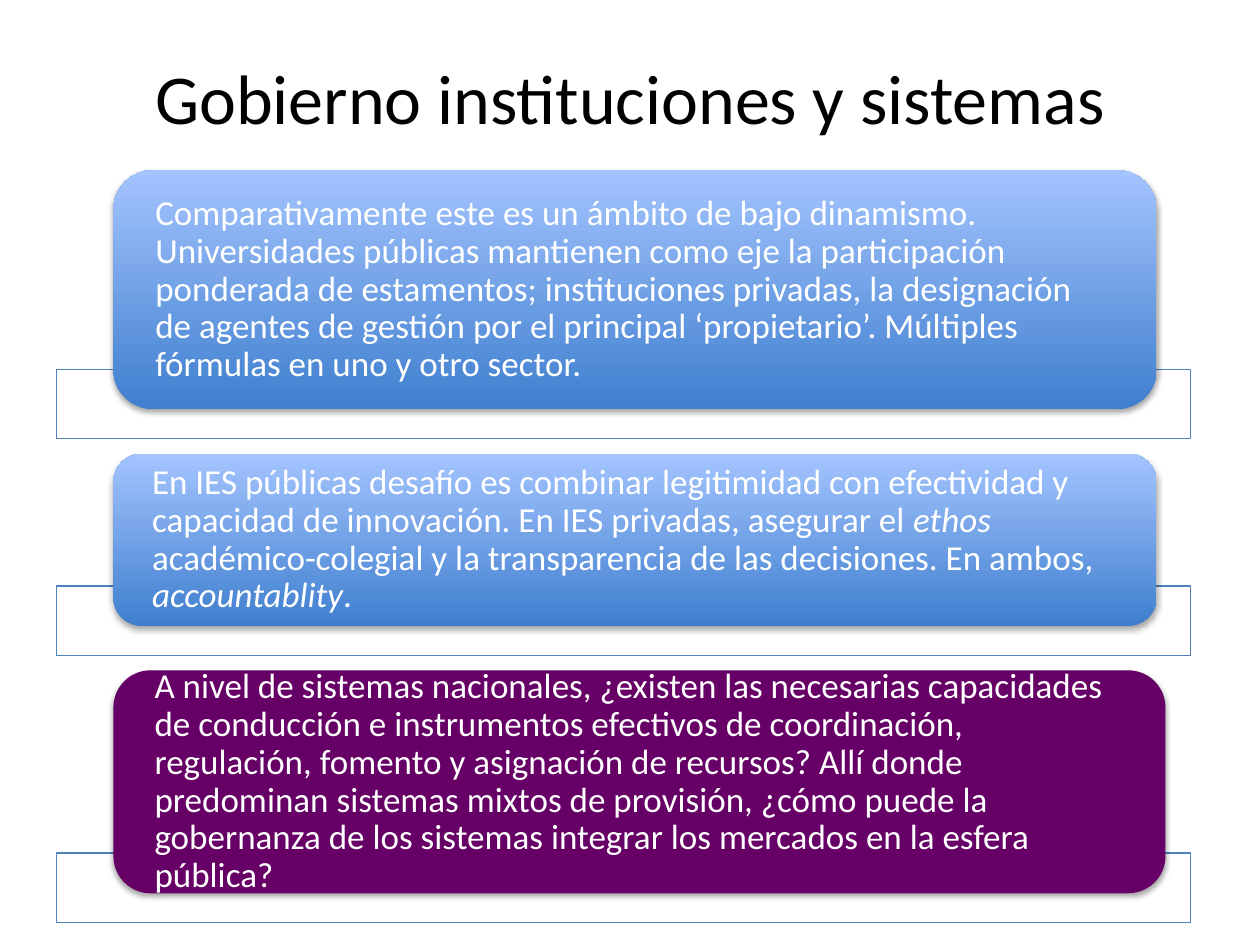
from lxml.etree import SubElement
from pptx import Presentation
from pptx.dml.color import RGBColor
from pptx.enum.shapes import MSO_SHAPE as Shape
from pptx.enum.text import MSO_ANCHOR as Anchor, PP_ALIGN as Align
from pptx.oxml.ns import qn
from pptx.util import Inches, Pt

BLACK = RGBColor(0x00, 0x00, 0x00)
WHITE = RGBColor(0xFF, 0xFF, 0xFF)
OUTLINE = RGBColor(0x4F, 0x81, 0xBD)
BLUE_DARK = RGBColor(0x3F, 0x7F, 0xCE)
BLUE_LIGHT = RGBColor(0xA4, 0xC4, 0xFF)
PURPLE = RGBColor(0x66, 0x00, 0x66)
FONT = "Calibri"

BAR_LEFT, BAR_WIDTH, BAR_HEIGHT = 0.45, 9, 0.55
CARD_LEFT, BAR_OVERLAP = 0.9, 0.32

CARDS = [
    (1.35, 8.28, 1.9, (BLUE_DARK, BLUE_LIGHT), [
        ("Comparativamente este es un ámbito de bajo dinamismo. Universidades "
         "públicas mantienen como eje la participación ponderada de estamentos; "
         "instituciones privadas, la designación de agentes de gestión por el "
         "principal ‘propietario’. Múltiples fórmulas en uno y otro sector.", False),
    ]),
    (3.6, 8.28, 1.37, (BLUE_DARK, BLUE_LIGHT), [
        ("En IES públicas desafío es combinar legitimidad con efectividad y "
         "capacidad de innovación. En IES privadas, asegurar el ", False),
        ("ethos", True),
        (" académico-colegial y la transparencia de las decisiones. En ambos, ", False),
        ("accountablity", True),
        (".", False),
    ]),
    (5.32, 8.35, 1.77, (PURPLE,), [
        ("A nivel de sistemas nacionales, ¿existen las necesarias capacidades de "
         "conducción e instrumentos efectivos de coordinación, regulación, fomento "
         "y asignación de recursos? Allí donde predominan sistemas mixtos de "
         "provisión, ¿cómo puede la gobernanza de los sistemas integrar los "
         "mercados en la esfera pública?", False),
    ]),
]


def add_run(para, text, size, color, italic=False):
    span = para.add_run()
    span.text = text
    span.font.name = FONT
    span.font.size = Pt(size)
    span.font.color.rgb = color
    span.font.italic = italic


def add_alpha(color_node, percent):
    SubElement(color_node, qn("a:alpha"), val=str(percent * 1000))


def add_soft_shadow(shape):
    effects = shape._element.spPr.find(qn("a:effectLst"))
    shadow = SubElement(effects, qn("a:outerShdw"), blurRad=str(Pt(3.1)),
                        dist=str(Pt(1.8)), dir="5400000", rotWithShape="0")
    add_alpha(SubElement(shadow, qn("a:srgbClr"), val=str(BLACK)), 35)


def paint(shape, colors):
    if len(colors) == 1:
        shape.fill.solid()
        shape.fill.fore_color.rgb = colors[0]
        return
    shape.fill.gradient()
    shape.fill.gradient_angle = 90
    for stop, color, position in zip(shape.fill.gradient_stops, colors, (0, 1)):
        stop.color.rgb = color
        stop.position = position


def add_title(page, left, top, width, height):
    title = page.shapes.title
    title.left, title.top = Inches(left), Inches(top)
    title.width, title.height = Inches(width), Inches(height)
    title.text_frame.vertical_anchor = Anchor.MIDDLE
    para = title.text_frame.paragraphs[0]
    para.alignment = Align.CENTER
    add_run(para, "Gobierno instituciones y sistemas", 40, BLACK)


def add_bar(page, left, top, width, height):
    bar = page.shapes.add_shape(Shape.RECTANGLE, Inches(left), Inches(top),
                                Inches(width), Inches(height))
    bar.shadow.inherit = False
    paint(bar, (WHITE,))
    add_alpha(bar._element.spPr.find(qn("a:solidFill"))[0], 90)
    bar.line.color.rgb = OUTLINE
    bar.line.width = Pt(0.75)


def add_card(page, left, top, width, height, colors, runs):
    card = page.shapes.add_shape(Shape.ROUNDED_RECTANGLE, Inches(left), Inches(top),
                                 Inches(width), Inches(height))
    card.shadow.inherit = False
    paint(card, colors)
    card.line.fill.background()
    add_soft_shadow(card)
    frame = card.text_frame
    frame.word_wrap = True
    frame.vertical_anchor = Anchor.MIDDLE
    frame.margin_left = frame.margin_right = Inches(0.24)
    frame.margin_top = frame.margin_bottom = 0
    para = frame.paragraphs[0]
    para.alignment = Align.LEFT
    para.line_spacing = 0.9
    for text, italic in runs:
        add_run(para, text, 20, WHITE, italic)


def main():
    deck = Presentation()
    deck.slide_width, deck.slide_height = Inches(10), Inches(7.5)
    page = deck.slides.add_slide(deck.slide_layouts[5])
    add_title(page, 0.5, 0.14, 9, 1.25)
    for top, width, height, colors, runs in CARDS:
        add_bar(page, BAR_LEFT, top + height - BAR_OVERLAP, BAR_WIDTH, BAR_HEIGHT)
        add_card(page, CARD_LEFT, top, width, height, colors, runs)
    deck.save("out.pptx")


if __name__ == "__main__":
    main()
